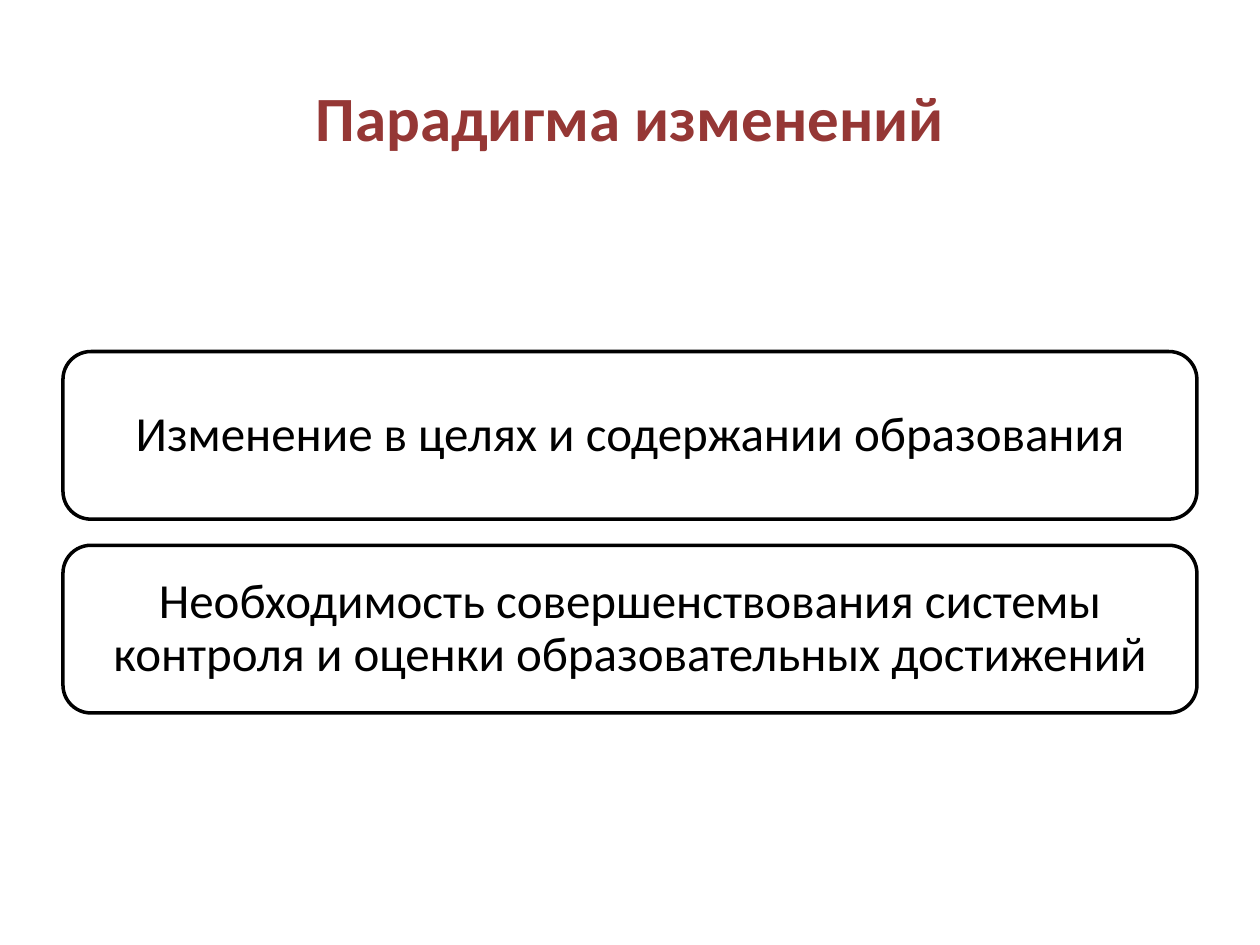
import pptx
import pptx.dml.color
import pptx.enum.shapes
import pptx.enum.text
import pptx.util

Pt = pptx.util.Pt

TITLE = "Парадигма изменений"
STATEMENTS = [
    "Изменение в целях и содержании образования",
    "Необходимость совершенствования системы контроля и оценки образовательных достижений",
]

LEFT, WIDTH = 36, 648
TITLE_TOP, TITLE_HEIGHT = 21.6, 90
CARD_TOP, CARD_HEIGHT, CARD_GAP = 200.9, 95.8, 14.9
CARD_INSET = 8.4


def color(value):
    return pptx.dml.color.RGBColor.from_string(value)


def write(shape, text, size, ink, bold=False):
    """Put one centred paragraph in the shape and return it."""
    frame = shape.text_frame
    frame.word_wrap = True
    frame.vertical_anchor = pptx.enum.text.MSO_ANCHOR.MIDDLE
    paragraph = frame.paragraphs[0]
    paragraph.text = text
    paragraph.alignment = pptx.enum.text.PP_ALIGN.CENTER
    paragraph.font.name = "Calibri"
    paragraph.font.size = Pt(size)
    paragraph.font.bold = bold
    paragraph.font.color.rgb = color(ink)
    return paragraph


def add_card(page, text, top):
    card = page.shapes.add_shape(
        pptx.enum.shapes.MSO_SHAPE.ROUNDED_RECTANGLE,
        Pt(LEFT), Pt(top), Pt(WIDTH), Pt(CARD_HEIGHT),
    )
    card.shadow.inherit = False
    card.fill.solid()
    card.fill.fore_color.rgb = color("FFFFFF")
    card.line.color.rgb = color("000000")
    card.line.width = Pt(2)
    frame = card.text_frame
    frame.margin_left = frame.margin_right = Pt(CARD_INSET)
    frame.margin_top = frame.margin_bottom = Pt(CARD_INSET)
    write(card, text, 28, "000000").line_spacing = 0.9


def main():
    deck = pptx.Presentation()
    deck.slide_width, deck.slide_height = Pt(720), Pt(540)
    page = deck.slides.add_slide(deck.slide_layouts[6])

    title = page.shapes.add_textbox(Pt(LEFT), Pt(TITLE_TOP), Pt(WIDTH), Pt(TITLE_HEIGHT))
    write(title, TITLE, 36, "953735", bold=True)

    for index, statement in enumerate(STATEMENTS):
        add_card(page, statement, CARD_TOP + index * (CARD_HEIGHT + CARD_GAP))

    deck.save("out.pptx")


if __name__ == "__main__":
    main()
